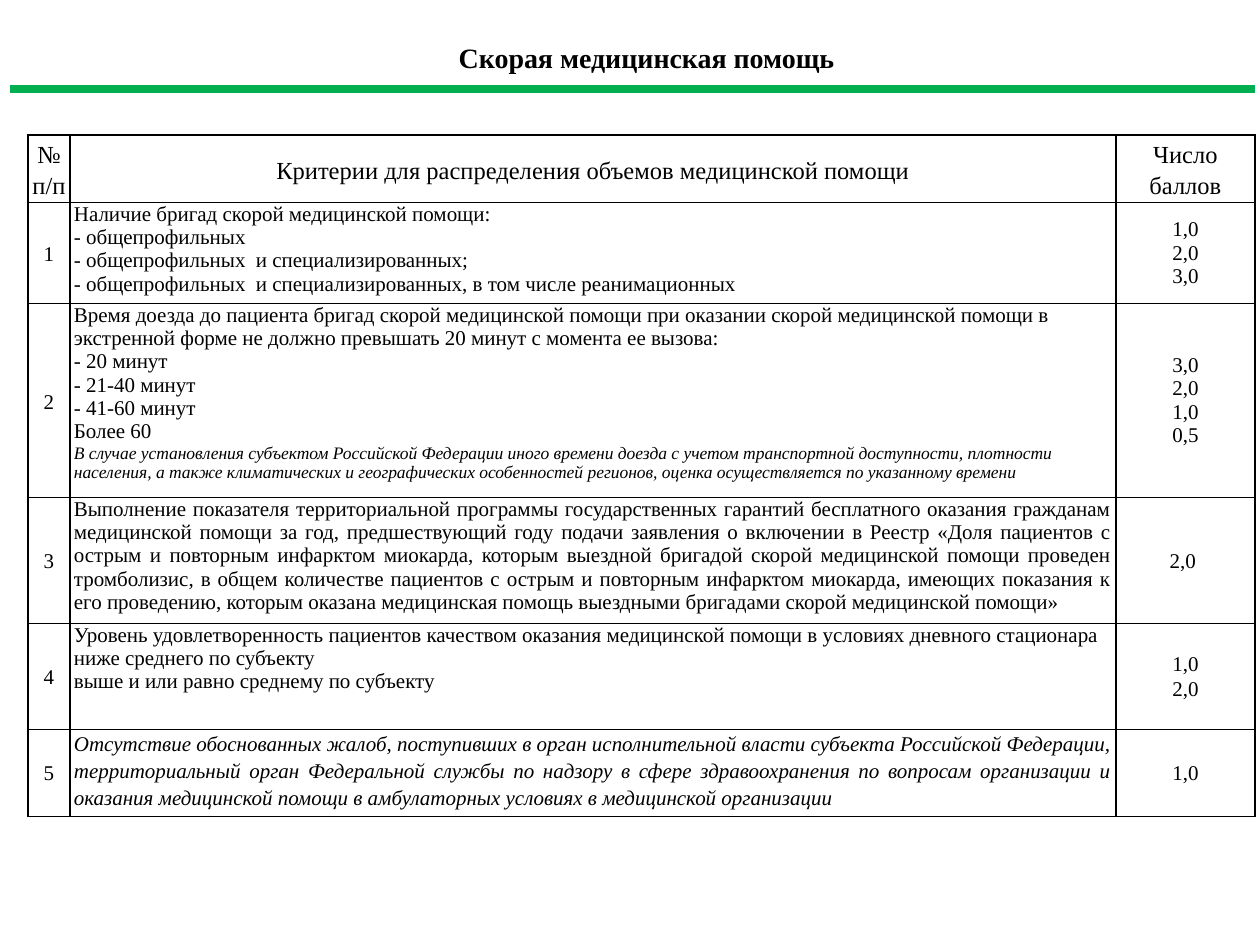
from dataclasses import dataclass

import pptx
import pptx.dml.color
import pptx.enum.shapes
import pptx.enum.text
import pptx.oxml
import pptx.oxml.ns
import pptx.util
from lxml import etree

ALIGN = pptx.enum.text.PP_ALIGN
ANCHOR = pptx.enum.text.MSO_ANCHOR
EMU_PER_PX = 914400 / 126


@dataclass(frozen=True)
class Theme:
    font: str = "Times New Roman"
    ink: str = "000000"
    rule: str = "00B050"
    title: int = 16
    header: int = 14
    body: int = 12
    note: int = 10
    border: int = 1
    rule_width: float = 4.5


THEME = Theme()


@dataclass(frozen=True)
class Style:
    size: int = THEME.body
    align: int = ALIGN.LEFT
    line_spacing: float = 1.0
    space_after: int = 0
    bold: bool = False
    italic: bool = False


@dataclass(frozen=True)
class Criterion:
    height: int
    lines: tuple[str, ...]
    scores: tuple[str, ...]
    number_style: Style
    score_style: Style
    style: Style = Style()
    note: str = ""


TITLE = Style(THEME.title, ALIGN.CENTER, 1.15, 10, bold=True)
HEADER = Style(THEME.header, ALIGN.CENTER, 1.15, 10)
NOTE = Style(THEME.note, italic=True)
CENTERED = Style(align=ALIGN.CENTER)
CENTERED_LOOSE = Style(align=ALIGN.CENTER, line_spacing=1.07)
CENTERED_SPACED = Style(align=ALIGN.CENTER, line_spacing=1.15, space_after=10)
JUSTIFIED = Style(align=ALIGN.JUSTIFY)
JUSTIFIED_ITALIC = Style(align=ALIGN.JUSTIFY, line_spacing=1.15, space_after=10, italic=True)

COLUMN_WIDTHS = (42, 1046, 139)
HEADER_HEIGHT = 67
HEADINGS = ("№ п/п", "Критерии для распределения объемов медицинской помощи", "Число баллов")
CRITERIA = (
    Criterion(
        101,
        (
            "Наличие бригад скорой медицинской помощи:",
            "- общепрофильных",
            "- общепрофильных  и специализированных;",
            "- общепрофильных  и специализированных, в том числе реанимационных",
        ),
        ("1,0", "2,0", "3,0"), CENTERED_SPACED, CENTERED,
    ),
    Criterion(
        194,
        (
            "Время доезда до пациента бригад скорой медицинской помощи при оказании скорой "
            "медицинской помощи в экстренной форме не должно превышать 20 минут с момента ее вызова:",
            "- 20 минут",
            "- 21-40 минут",
            "- 41-60 минут",
            "Более 60",
        ),
        ("3,0", "2,0", "1,0", "0,5"), CENTERED_SPACED, CENTERED,
        note="В случае установления субъектом Российской Федерации иного времени доезда с учетом "
        "транспортной доступности, плотности населения, а также климатических и географических "
        "особенностей регионов, оценка осуществляется по указанному времени",
    ),
    Criterion(
        126,
        (
            "Выполнение показателя территориальной программы государственных гарантий бесплатного "
            "оказания гражданам медицинской помощи за год, предшествующий году подачи заявления о "
            "включении в Реестр «Доля пациентов с острым и повторным инфарктом миокарда, которым "
            "выездной бригадой скорой медицинской помощи проведен тромболизис, в общем количестве "
            "пациентов с острым и повторным инфарктом миокарда, имеющих показания к его проведению, "
            "которым оказана медицинская помощь выездными бригадами скорой медицинской помощи»",
        ),
        ("2,0 ",), CENTERED_LOOSE, CENTERED_LOOSE, JUSTIFIED,
    ),
    Criterion(
        106,
        (
            "Уровень удовлетворенность пациентов качеством оказания медицинской помощи в условиях "
            "дневного стационара",
            "ниже среднего по субъекту",
            "выше и или равно среднему по субъекту",
        ),
        ("1,0", "2,0"), CENTERED_LOOSE, CENTERED_LOOSE,
    ),
    Criterion(
        87,
        (
            "Отсутствие обоснованных жалоб, поступивших в орган исполнительной власти субъекта "
            "Российской Федерации, территориальный орган Федеральной службы по надзору в сфере "
            "здравоохранения по вопросам организации и оказания медицинской помощи в амбулаторных "
            "условиях в медицинской организации",
        ),
        ("1,0",), CENTERED_LOOSE, CENTERED_LOOSE, JUSTIFIED_ITALIC,
    ),
)


def px(length: int) -> pptx.util.Emu:
    return pptx.util.Emu(round(length * EMU_PER_PX))


def rgb(value: str) -> pptx.dml.color.RGBColor:
    return pptx.dml.color.RGBColor.from_string(value)


def write(frame, lines: list[tuple[str, Style]]) -> None:
    """Fill a text frame with one styled paragraph per line."""
    for index, (text, style) in enumerate(lines):
        paragraph = frame.paragraphs[0] if index == 0 else frame.add_paragraph()
        paragraph.text = text
        paragraph.alignment = style.align
        paragraph.line_spacing = style.line_spacing
        paragraph.space_after = pptx.util.Pt(style.space_after)
        font = paragraph.font
        font.name, font.size = THEME.font, pptx.util.Pt(style.size)
        font.bold, font.italic = style.bold, style.italic
        font.color.rgb = rgb(THEME.ink)


def add_borders(cell) -> None:
    properties = cell._tc.get_or_add_tcPr()
    for position, side in enumerate(("lnL", "lnR", "lnT", "lnB")):
        border = pptx.oxml.parse_xml(
            f'<a:{side} {pptx.oxml.ns.nsdecls("a")} w="{pptx.util.Pt(THEME.border)}">'
            f'<a:solidFill><a:srgbClr val="{THEME.ink}"/></a:solidFill></a:{side}>'
        )
        properties.insert(position, border)


def fill_cell(cell, lines: list[tuple[str, Style]], anchor=ANCHOR.MIDDLE) -> None:
    cell.margin_left = cell.margin_right = px(4)
    cell.margin_top = cell.margin_bottom = 0
    cell.vertical_anchor = anchor
    cell.fill.background()
    add_borders(cell)
    write(cell.text_frame, lines)


def add_title(slide) -> None:
    title = slide.shapes.add_textbox(px(9), px(29), px(1201), px(49)).text_frame
    title.word_wrap = True
    title.auto_size = pptx.enum.text.MSO_AUTO_SIZE.SHAPE_TO_FIT_TEXT
    write(title, [("Скорая медицинская помощь", TITLE)])
    title.paragraphs[0]._p.get_or_add_pPr().set("indent", str(px(74)))


def add_criteria_table(slide) -> None:
    heights = [HEADER_HEIGHT] + [criterion.height for criterion in CRITERIA]
    table = slide.shapes.add_table(
        len(heights), len(COLUMN_WIDTHS), px(28), px(135), px(sum(COLUMN_WIDTHS)), px(sum(heights))
    ).table
    table.first_row = table.horz_banding = False
    for column, width in zip(table.columns, COLUMN_WIDTHS):
        column.width = px(width)
    for row, height in zip(table.rows, heights):
        row.height = px(height)
    for column, heading in enumerate(HEADINGS):
        fill_cell(table.cell(0, column), [(heading, HEADER)])
    for number, criterion in enumerate(CRITERIA, start=1):
        description = [(line, criterion.style) for line in criterion.lines]
        if criterion.note:
            description.append((criterion.note, NOTE))
        fill_cell(table.cell(number, 0), [(str(number), criterion.number_style)])
        fill_cell(table.cell(number, 1), description, ANCHOR.TOP)
        fill_cell(table.cell(number, 2), [(score, criterion.score_style) for score in criterion.scores])


def add_rule(slide) -> None:
    rule = slide.shapes.add_connector(
        pptx.enum.shapes.MSO_CONNECTOR.STRAIGHT, px(10), px(89), px(1255), px(89)
    )
    rule.line.color.rgb = rgb(THEME.rule)
    rule.line.width = pptx.util.Pt(THEME.rule_width)
    etree.SubElement(rule._element.spPr, pptx.oxml.ns.qn("a:effectLst"))


def main() -> None:
    deck = pptx.Presentation()
    deck.slide_width, deck.slide_height = px(1260), px(945)
    slide = deck.slides.add_slide(deck.slide_layouts[6])
    add_title(slide)
    add_criteria_table(slide)
    add_rule(slide)
    deck.save("out.pptx")


if __name__ == "__main__":
    main()
